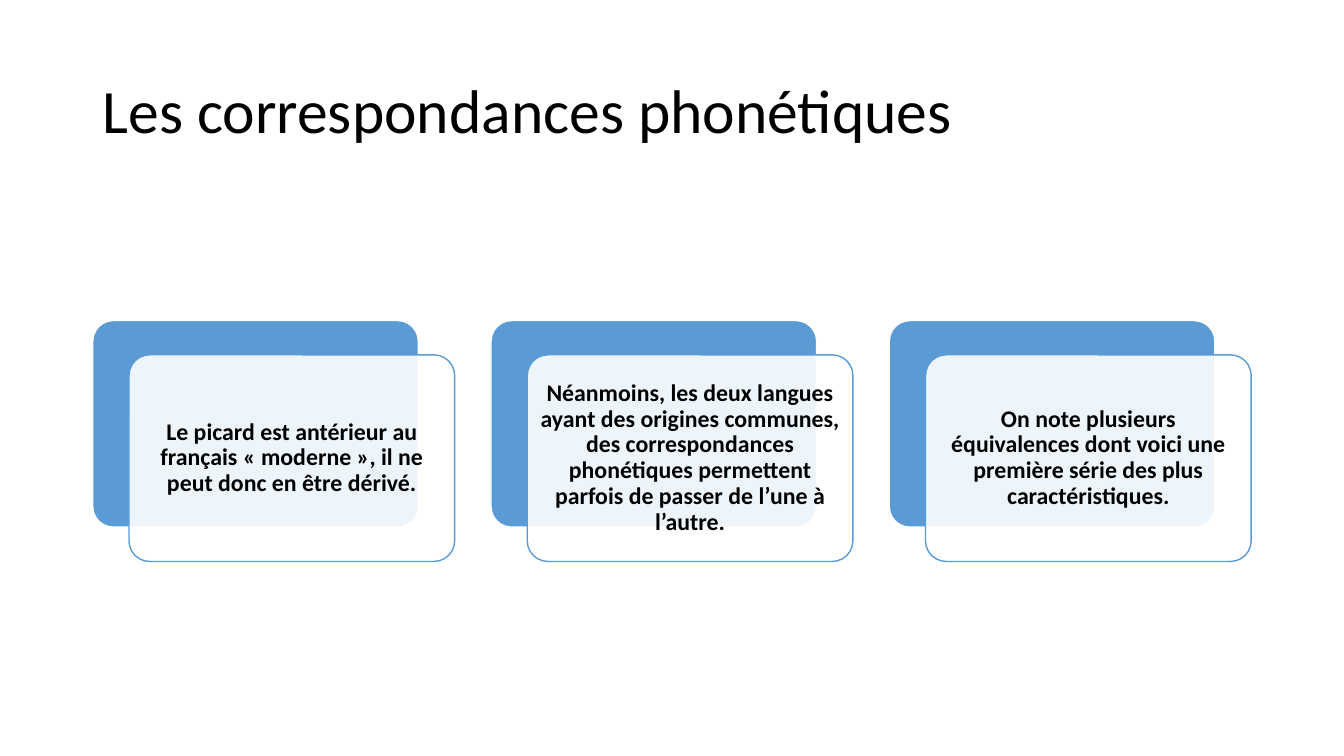
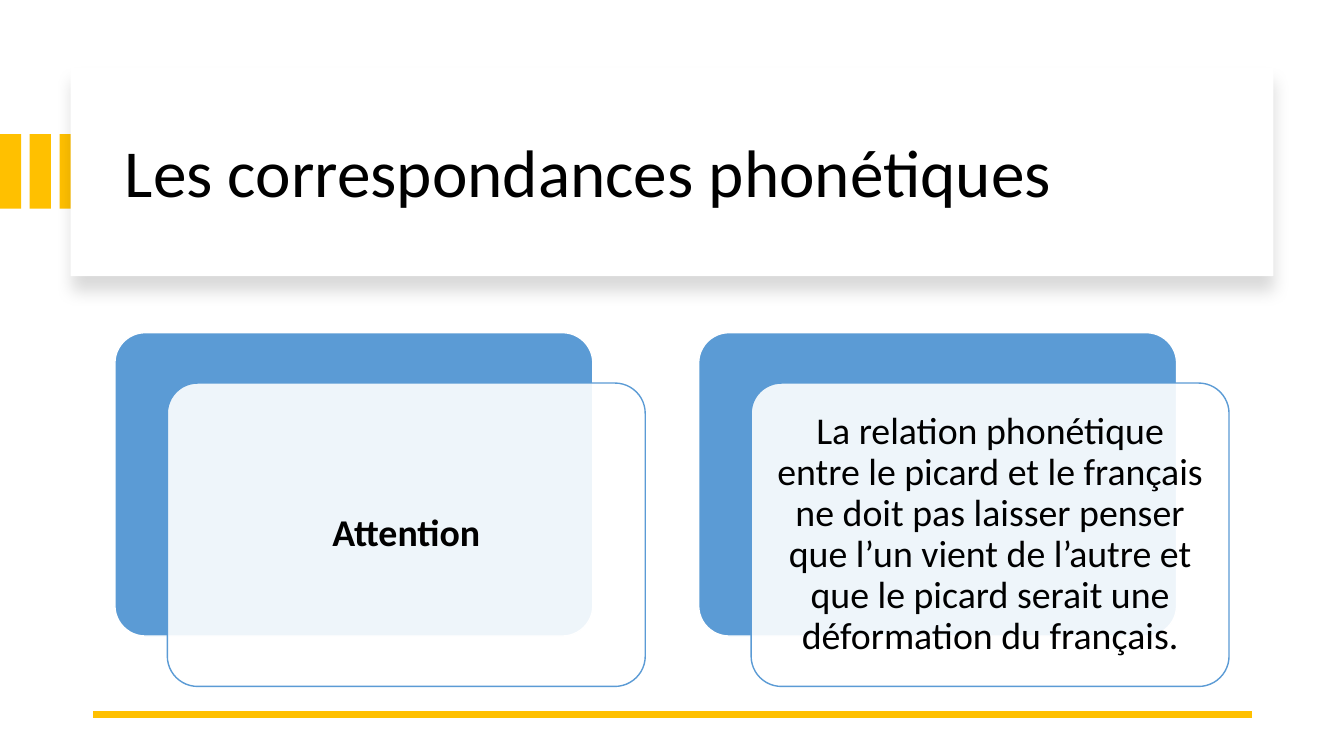
"""Build two slides on phonetic correspondences between Picard and French."""
from lxml.etree import SubElement
from pptx import Presentation
from pptx.dml.color import RGBColor
from pptx.enum.shapes import MSO_CONNECTOR, MSO_SHAPE
from pptx.enum.text import MSO_ANCHOR, PP_ALIGN
from pptx.oxml.ns import qn
from pptx.util import Inches, Pt

COLORS = {"blue": "5B9BD5", "gold": "FFC000", "white": "FFFFFF", "black": "000000"}
FONT = "Calibri"
TITLE = "Les correspondances phonétiques"

SLIDES = [
    {
        "title": {"box": (0.92, 0.4, 11.5, 1.45), "size": 44},
        "banner": False,
        "cards": {"start": (0.92, 3.18), "card": (3.23, 2.05), "offset": (0.36, 0.34),
                  "pitch": 3.95, "inset": 0.07, "size": 17},
        "texts": [
            ("Le picard est antérieur au français « moderne », il ne peut donc en être dérivé.", True),
            ("Néanmoins, les deux langues ayant des origines communes, des correspondances "
             "phonétiques permettent parfois de passer de l’une à l’autre.", True),
            ("On note plusieurs équivalences dont voici une première série des plus "
             "caractéristiques.", True),
        ],
    },
    {
        "title": {"box": (1.14, 0.89, 11.13, 1.7), "size": 48},
        "banner": True,
        "cards": {"start": (1.14, 3.3), "card": (4.74, 3.01), "offset": (0.52, 0.5),
                  "pitch": 5.79, "inset": 0.11, "size": 27},
        "texts": [
            ("Attention", True),
            ("La relation phonétique entre le picard et le français ne doit pas laisser penser "
             "que l’un vient de l’autre et que le picard serait une déformation du français.", False),
        ],
    },
]


def rgb(name):
    return RGBColor.from_string(COLORS[name])


def add_box(s, kind, box, fill, line=None):
    sp = s.shapes.add_shape(kind, *map(Inches, box))
    sp.shadow.inherit = False
    sp.fill.solid()
    sp.fill.fore_color.rgb = rgb(fill)
    if line:
        sp.line.color.rgb = rgb(line)
        sp.line.width = Pt(1)
    else:
        sp.line.fill.background()
    return sp


def write(sp, text, size, align, bold=False):
    tf = sp.text_frame
    tf.word_wrap = True
    tf.vertical_anchor = MSO_ANCHOR.MIDDLE
    p = tf.paragraphs[0]
    p.text = text
    p.alignment = align
    p.line_spacing = 0.9
    font = p.runs[0].font
    font.name, font.size, font.bold = FONT, Pt(size), bold
    font.color.rgb = rgb("black")


def add_title(s, box, size):
    write(s.shapes.add_textbox(*map(Inches, box)), TITLE, size, PP_ALIGN.LEFT)


def add_banner(s):
    for i in range(3):
        add_box(s, MSO_SHAPE.RECTANGLE, (i * 0.295, 1.33, 0.21, 0.74), "gold")
    panel = add_box(s, MSO_SHAPE.RECTANGLE, (0.7, 0.67, 11.93, 2.07), "white")
    effects = panel._element.spPr.find(qn("a:effectLst"))
    shadow = SubElement(effects, qn("a:outerShdw"), blurRad=str(Pt(11)), dist=str(Pt(10)),
                        dir="5400000", algn="t", rotWithShape="0")
    color = SubElement(shadow, qn("a:srgbClr"), val=COLORS["black"])
    SubElement(color, qn("a:alpha"), val="15000")


def add_rule(s):
    rule = s.shapes.add_connector(MSO_CONNECTOR.STRAIGHT, Inches(12.42), Inches(7.09),
                                  Inches(0.92), Inches(7.09))
    rule.line.color.rgb = rgb("gold")
    rule.line.width = Pt(4.5)
    SubElement(rule._element.spPr, qn("a:effectLst"))


def add_cards(s, texts, start, card, offset, pitch, inset, size):
    for i, (text, bold) in enumerate(texts):
        x, y = start[0] + i * pitch, start[1]
        back = add_box(s, MSO_SHAPE.ROUNDED_RECTANGLE, (x, y, *card), "blue", "white")
        front = add_box(s, MSO_SHAPE.ROUNDED_RECTANGLE,
                        (x + offset[0], y + offset[1], *card), "white", "blue")
        for sp in (back, front):
            sp.adjustments[0] = 0.1
        color = front._element.spPr.find(qn("a:solidFill")).find(qn("a:srgbClr"))
        SubElement(color, qn("a:alpha"), val="90000")
        tf = front.text_frame
        tf.margin_left = tf.margin_right = tf.margin_top = tf.margin_bottom = Inches(inset)
        write(front, text, size, PP_ALIGN.CENTER, bold)


def main():
    prs = Presentation()
    prs.slide_width, prs.slide_height = Inches(13.33), Inches(7.5)
    for content in SLIDES:
        s = prs.slides.add_slide(prs.slide_layouts[6])
        if content["banner"]:
            add_banner(s)
        add_title(s, **content["title"])
        if content["banner"]:
            add_rule(s)
        add_cards(s, content["texts"], **content["cards"])
    prs.save("out.pptx")


if __name__ == "__main__":
    main()
